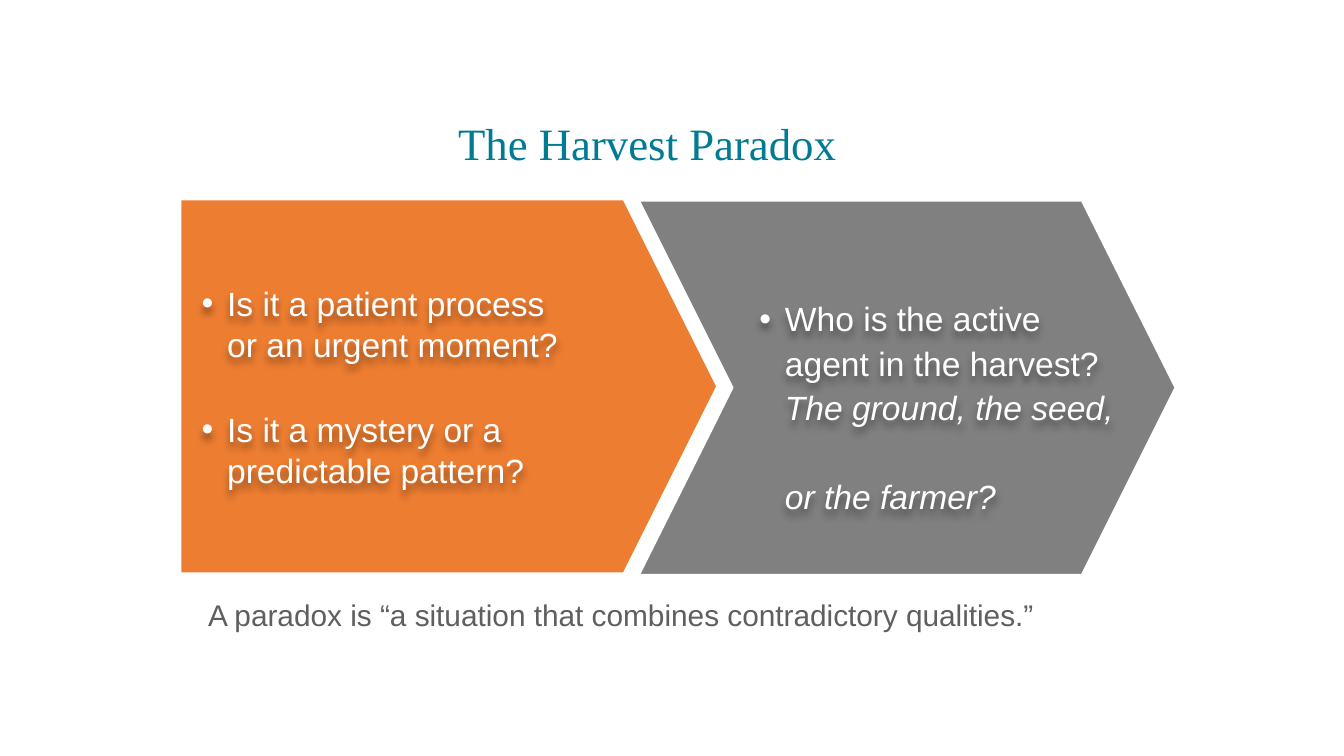
from dataclasses import dataclass

from lxml.etree import SubElement
from pptx import Presentation
from pptx.dml.color import RGBColor
from pptx.enum.shapes import MSO_SHAPE
from pptx.enum.text import MSO_ANCHOR
from pptx.oxml.ns import qn
from pptx.util import Inches, Pt

WHITE = "FFFFFF"
INDENT = 0.19


@dataclass
class Para:
    text: str
    before: float = 0
    bullet: bool = True
    slant: bool = False


@dataclass
class Arrow:
    kind: MSO_SHAPE
    left: float
    top: float
    fill: str
    text_left: float
    text_width: float
    insets: tuple[float, float, float, float]
    anchor: MSO_ANCHOR
    spacing: float
    paras: list[Para]


ARROWS = [
    Arrow(MSO_SHAPE.PENTAGON, 1.34, 1.48, "ED7D31", 1.34, 3.75,
          (0.16, 0.06, 0.63, 0.06), MSO_ANCHOR.MIDDLE, 1.02,
          [Para("Is it a patient process\vor an urgent moment?"),
           Para("Is it a mystery or a predictable pattern?", 23.5)]),
    Arrow(MSO_SHAPE.CHEVRON, 4.75, 1.49, "808080", 5.49, 3.01,
          (0.16, 0.7, 0.16, 0.06), MSO_ANCHOR.TOP, 1.1,
          [Para("Who is the active\vagent in the harvest?"),
           Para("The ground, the seed,", bullet=False, slant=True),
           Para("or the farmer?", 24, False, True)]),
]


def color(code: str) -> RGBColor:
    return RGBColor.from_string(code)


def style(para, size: float, face: str, code: str, slant: bool = False) -> None:
    for run in para.runs:
        font = run.font
        font.size, font.name, font.italic = Pt(size), face, slant
        font.color.rgb = color(code)


def add_box(slide, left: float, top: float, width: float, height: float):
    box = slide.shapes.add_textbox(
        Inches(left), Inches(top), Inches(width), Inches(height))
    box.text_frame.word_wrap = True
    return box


def add_label(slide, text: str, place: tuple, size: float, face: str, code: str) -> None:
    para = add_box(slide, *place).text_frame.paragraphs[0]
    para.text = text
    style(para, size, face, code)


def add_shade(box) -> None:
    """Give an unfilled box a soft shadow, which falls from its text."""
    effects = SubElement(box._element.spPr, qn("a:effectLst"))
    shade = SubElement(effects, qn("a:outerShdw"), blurRad="50800",
                       dist="38100", dir="5400000", algn="t", rotWithShape="0")
    black = SubElement(shade, qn("a:srgbClr"), val="000000")
    SubElement(black, qn("a:alpha"), val="40000")


def set_indent(para, bullet: bool) -> None:
    props = para._p.get_or_add_pPr()
    props.set("marL", str(Inches(INDENT)))
    props.set("indent", str(Inches(-INDENT if bullet else 0)))
    if bullet:
        SubElement(props, qn("a:buFont"), typeface="Arial")
        SubElement(props, qn("a:buChar"), char="•")
    else:
        SubElement(props, qn("a:buNone"))


def add_arrow(slide, arrow: Arrow) -> None:
    width, height = 4, 2.79
    shape = slide.shapes.add_shape(
        arrow.kind, Inches(arrow.left), Inches(arrow.top), Inches(width), Inches(height))
    shape.adjustments[0] = 0.25
    shape.shadow.inherit = False
    shape.fill.solid()
    shape.fill.fore_color.rgb = color(arrow.fill)
    shape.line.color.rgb = color(WHITE)
    shape.line.width = Pt(1.5)

    box = add_box(slide, arrow.text_left, arrow.top, arrow.text_width, height)
    add_shade(box)
    frame = box.text_frame
    frame.vertical_anchor = arrow.anchor
    (frame.margin_left, frame.margin_top,
     frame.margin_right, frame.margin_bottom) = map(Inches, arrow.insets)
    for i, item in enumerate(arrow.paras):
        para = frame.add_paragraph() if i else frame.paragraphs[0]
        para.text = item.text
        set_indent(para, item.bullet)
        para.line_spacing = arrow.spacing
        if item.before:
            para.space_before = Pt(item.before)
        style(para, 18, "Arial", WHITE, item.slant)


def main() -> None:
    deck = Presentation()
    deck.slide_width = Inches(10)
    deck.slide_height = deck.slide_width * 9 // 16
    slide = deck.slides.add_slide(deck.slide_layouts[6])
    for arrow in ARROWS:
        add_arrow(slide, arrow)
    add_label(slide, "The Harvest Paradox", (3.31, 0.81, 3.35, 0.5),
              24, "Times New Roman", "007B93")
    add_label(slide, "A paradox is “a situation that combines contradictory qualities.”",
              (1.45, 4.39, 6.57, 0.64), 16, "Arial", "5F5F5F")
    deck.save("out.pptx")


if __name__ == "__main__":
    main()
